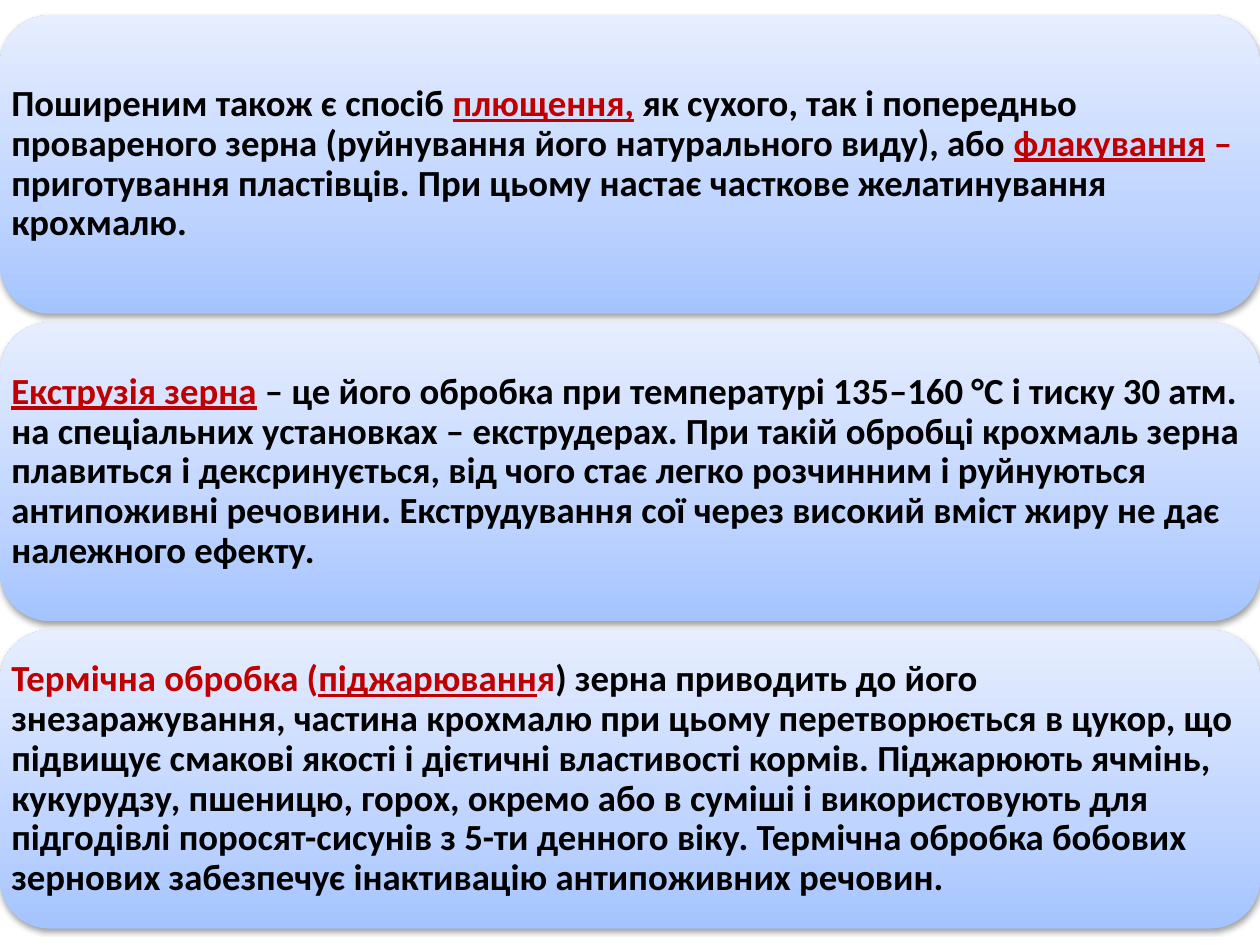
from pptx import Presentation
from pptx.dml.color import RGBColor
from pptx.enum.shapes import MSO_SHAPE
from pptx.enum.text import MSO_ANCHOR, PP_ALIGN
from pptx.oxml import parse_xml
from pptx.oxml.ns import nsdecls
from pptx.util import Inches, Pt

BLACK = RGBColor(0x00, 0x00, 0x00)
RED = RGBColor(0xC0, 0x00, 0x00)
PANEL_STOPS = [
    (0, RGBColor(0xA4, 0xC4, 0xFF)),
    (35, RGBColor(0xBF, 0xD4, 0xFF)),
    (100, RGBColor(0xE6, 0xEE, 0xFF)),
]

# Span styles: colour and underline
PLAIN = (BLACK, False)
ACCENT = (RED, False)
TERM = (RED, True)

PANEL_TOP, PANEL_HEIGHT, PANEL_PITCH = 0.12, 2.37, 2.44
PANEL_WIDTH = 10

PANELS = [
    [
        ("Поширеним також є спосіб ", PLAIN),
        ("плющення,", TERM),
        (" ", ACCENT),
        ("як сухого, так і попередньо провареного зерна (руйнування його "
         "натурального виду), або ", PLAIN),
        ("флакування", TERM),
        (" – ", ACCENT),
        ("приготування пластівців. При цьому настає часткове "
         "желатинування крохмалю.", PLAIN),
    ],
    [
        ("Екструзія зерна", TERM),
        (" ", ACCENT),
        ("– це його обробка при температурі 135–160 °С і тиску 30 атм. на "
         "спеціальних установках – екструдерах. При такій обробці крохмаль "
         "зерна плавиться і дексринується, від чого стає легко розчинним і "
         "руйнуються антипоживні речовини. Екструдування сої через високий "
         "вміст жиру не дає належного ефекту.", PLAIN),
    ],
    [
        ("Термічна обробка (", ACCENT),
        ("піджарюванн", TERM),
        ("я", ACCENT),
        (") зерна приводить до його знезаражування, частина крохмалю при "
         "цьому перетворюється в цукор, що підвищує смакові якості і "
         "дієтичні властивості кормів. Піджарюють ячмінь, кукурудзу, "
         "пшеницю, горох, окремо або в суміші і використовують для "
         "підгодівлі поросят-сисунів з 5-ти денного віку. Термічна обробка "
         "бобових зернових забезпечує інактивацію антипоживних речовин.",
         PLAIN),
    ],
]


class PageBuilder:
    font_name = "Calibri"
    font_size = Pt(21)
    inset = Inches(0.09)

    def __init__(self, page):
        self.page = page

    def add_panel(self, left, top, width, height):
        """Draw a rounded panel with a vertical gradient and a soft shadow."""
        panel = self.page.shapes.add_shape(
            MSO_SHAPE.ROUNDED_RECTANGLE, left, top, width, height)
        panel.line.fill.background()
        stops = "".join(
            f'<a:gs pos="{position * 1000}"><a:srgbClr val="{color}"/></a:gs>'
            for position, color in PANEL_STOPS)
        gradient = parse_xml(
            f'<a:gradFill {nsdecls("a")} rotWithShape="1">'
            f'<a:gsLst>{stops}</a:gsLst>'
            '<a:lin ang="16200000" scaled="0"/></a:gradFill>')
        shadow = parse_xml(
            f'<a:effectLst {nsdecls("a")}>'
            f'<a:outerShdw blurRad="{Pt(3.1)}" dist="{Pt(1.6)}" '
            'dir="5400000" rotWithShape="0"><a:srgbClr val="000000">'
            '<a:alpha val="38000"/></a:srgbClr></a:outerShdw></a:effectLst>')
        properties = panel.element.spPr
        properties.prstGeom.addnext(gradient)
        properties.append(shadow)

    def add_text(self, left, top, width, height, spans):
        box = self.page.shapes.add_textbox(left, top, width, height)
        frame = box.text_frame
        frame.word_wrap = True
        frame.vertical_anchor = MSO_ANCHOR.MIDDLE
        frame.margin_left = frame.margin_right = self.inset
        frame.margin_top = frame.margin_bottom = self.inset
        para = frame.paragraphs[0]
        para.alignment = PP_ALIGN.LEFT
        para.line_spacing = 0.9
        para.font.name = self.font_name
        para.font.size = self.font_size
        para.font.bold = True
        for text, (color, underline) in spans:
            span = para.add_run()
            span.text = text
            span.font.color.rgb = color
            span.font.underline = underline


def main():
    deck = Presentation()
    deck.slide_width = Inches(10)
    deck.slide_height = Inches(7.5)
    builder = PageBuilder(deck.slides.add_slide(deck.slide_layouts[6]))
    for index, spans in enumerate(PANELS):
        area = (0, Inches(PANEL_TOP + index * PANEL_PITCH),
                Inches(PANEL_WIDTH), Inches(PANEL_HEIGHT))
        builder.add_panel(*area)
        builder.add_text(*area, spans)
    deck.save("out.pptx")


if __name__ == "__main__":
    main()
